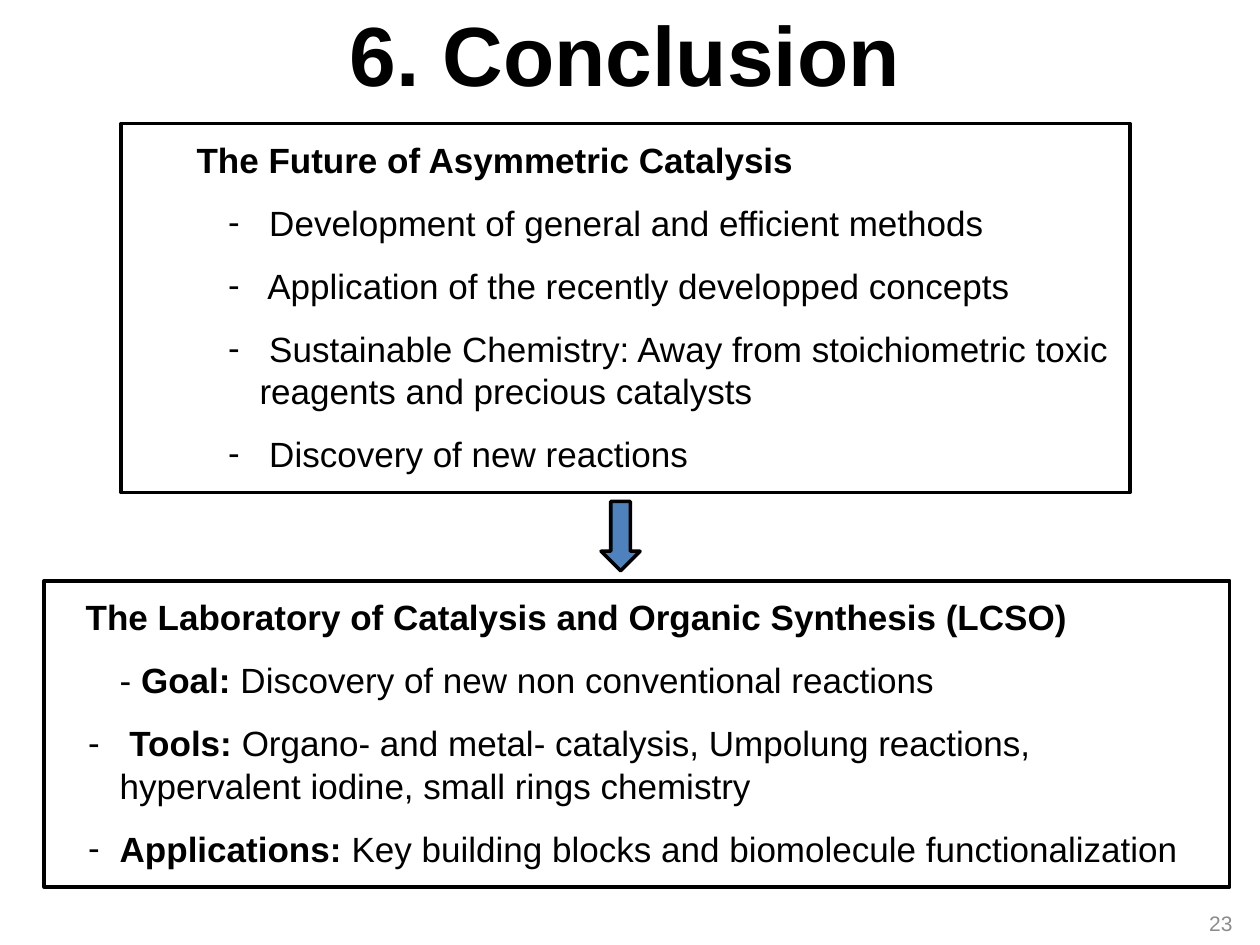
from dataclasses import dataclass

from lxml.etree import SubElement
from pptx import Presentation
from pptx.dml.color import RGBColor
from pptx.enum.shapes import MSO_SHAPE
from pptx.enum.text import MSO_ANCHOR, MSO_AUTO_SIZE, PP_ALIGN
from pptx.oxml.ns import qn
from pptx.util import Inches, Pt

BLACK = RGBColor(0x00, 0x00, 0x00)
BLUE = RGBColor(0x4F, 0x81, 0xBD)
GRAY = RGBColor(0x8C, 0x8C, 0x8C)
FONT = "Arial"
HANGING = 0.25


@dataclass(frozen=True)
class Span:
    text: str
    bold: bool = False


@dataclass(frozen=True)
class Item:
    spans: tuple[Span, ...]
    level: int = 0
    margin: float = 0.5
    bullet: bool = False


@dataclass(frozen=True)
class Panel:
    left: float
    top: float
    width: float
    height: float
    items: tuple[Item, ...]


def future_item(text: str) -> Item:
    return Item((Span(text),), level=2, margin=1, bullet=True)


def laboratory_item(lead: str, label: str, text: str, bullet: bool = True) -> Item:
    spans = (Span(lead), Span(label, bold=True), Span(text))
    return Item(tuple(span for span in spans if span.text), level=1, bullet=bullet)


PANELS = (
    Panel(0.96, 0.98, 8.01, 2.93, (
        Item((Span("The Future of Asymmetric Catalysis", bold=True),), level=1),
        future_item(" Development of general and efficient methods"),
        future_item(" Application of the recently developped concepts"),
        future_item(" Sustainable Chemistry: Away from stoichiometric toxic "
                    "reagents and precious catalysts"),
        future_item(" Discovery of new reactions"),
    )),
    Panel(0.35, 4.61, 9.41, 2.43, (
        Item((Span("The Laboratory of Catalysis and Organic Synthesis (LCSO)", bold=True),),
             margin=0.23),
        laboratory_item("- ", "Goal: ", "Discovery of new non conventional reactions",
                        bullet=False),
        laboratory_item(" ", "Tools: ", "Organo- and metal- catalysis, Umpolung reactions, "
                        "hypervalent iodine, small rings chemistry"),
        laboratory_item("", "Applications: ",
                        "Key building blocks and biomolecule functionalization"),
    )),
)


def place(shape, left: float, top: float, width: float, height: float) -> None:
    shape.left, shape.top = Inches(left), Inches(top)
    shape.width, shape.height = Inches(width), Inches(height)


def add_text(para, text: str, *, size: float = 20, bold: bool = False,
             color: RGBColor = BLACK) -> None:
    run = para.add_run()
    run.text = text
    run.font.name = FONT
    run.font.size = Pt(size)
    run.font.bold = bold
    run.font.color.rgb = color


def outline(shape) -> None:
    shape.line.color.rgb = BLACK
    shape.line.width = Pt(2)


def format_item(para, item: Item) -> None:
    para.level = item.level
    para.alignment = PP_ALIGN.LEFT
    para.space_before = Pt(12)
    para.line_spacing = Pt(24)
    properties = para._p.get_or_add_pPr()
    properties.set("marL", str(Inches(item.margin)))
    properties.set("indent", str(Inches(-HANGING if item.bullet else 0)))
    if item.bullet:
        SubElement(properties, qn("a:buFont"), typeface=FONT)
        SubElement(properties, qn("a:buChar"), char="-")
    else:
        SubElement(properties, qn("a:buNone"))


def fill_panel(box, panel: Panel) -> None:
    place(box, panel.left, panel.top, panel.width, panel.height)
    outline(box)
    frame = box.text_frame
    frame.auto_size = MSO_AUTO_SIZE.NONE
    frame.word_wrap = True
    frame.vertical_anchor = MSO_ANCHOR.TOP
    frame.margin_left = frame.margin_right = Inches(0.1)
    frame.margin_top = frame.margin_bottom = Inches(0.12)
    for index, item in enumerate(panel.items):
        para = frame.add_paragraph() if index else frame.paragraphs[0]
        format_item(para, item)
        for span in item.spans:
            add_text(para, span.text, bold=span.bold)


def add_title(slide) -> None:
    title = slide.shapes.title
    place(title, 0.39, -0.03, 9.14, 0.91)
    title.text_frame.auto_size = MSO_AUTO_SIZE.NONE
    title.text_frame.vertical_anchor = MSO_ANCHOR.TOP
    para = title.text_frame.paragraphs[0]
    para.alignment = PP_ALIGN.CENTER
    add_text(para, "6. Conclusion", size=48, bold=True)


def add_arrow(slide) -> None:
    arrow = slide.shapes.add_shape(MSO_SHAPE.DOWN_ARROW, Inches(4.77), Inches(3.98),
                                   Inches(0.31), Inches(0.55))
    arrow.shadow.inherit = False
    arrow.fill.solid()
    arrow.fill.fore_color.rgb = BLUE
    outline(arrow)


def add_page_number(slide) -> None:
    box = slide.shapes.add_textbox(Inches(7.55), Inches(7.13), Inches(2.33), Inches(0.4))
    box.text_frame.word_wrap = True
    box.text_frame.vertical_anchor = MSO_ANCHOR.MIDDLE
    para = box.text_frame.paragraphs[0]
    para.alignment = PP_ALIGN.RIGHT
    add_text(para, "23", size=12, color=GRAY)


def main() -> None:
    deck = Presentation()
    deck.slide_width, deck.slide_height = Inches(10), Inches(7.5)
    two_content = deck.slide_layouts[3]
    slide = deck.slides.add_slide(two_content)
    add_title(slide)
    for number, panel in enumerate(PANELS, start=1):
        fill_panel(slide.placeholders[number], panel)
    add_arrow(slide)
    add_page_number(slide)
    deck.save("out.pptx")


if __name__ == "__main__":
    main()
